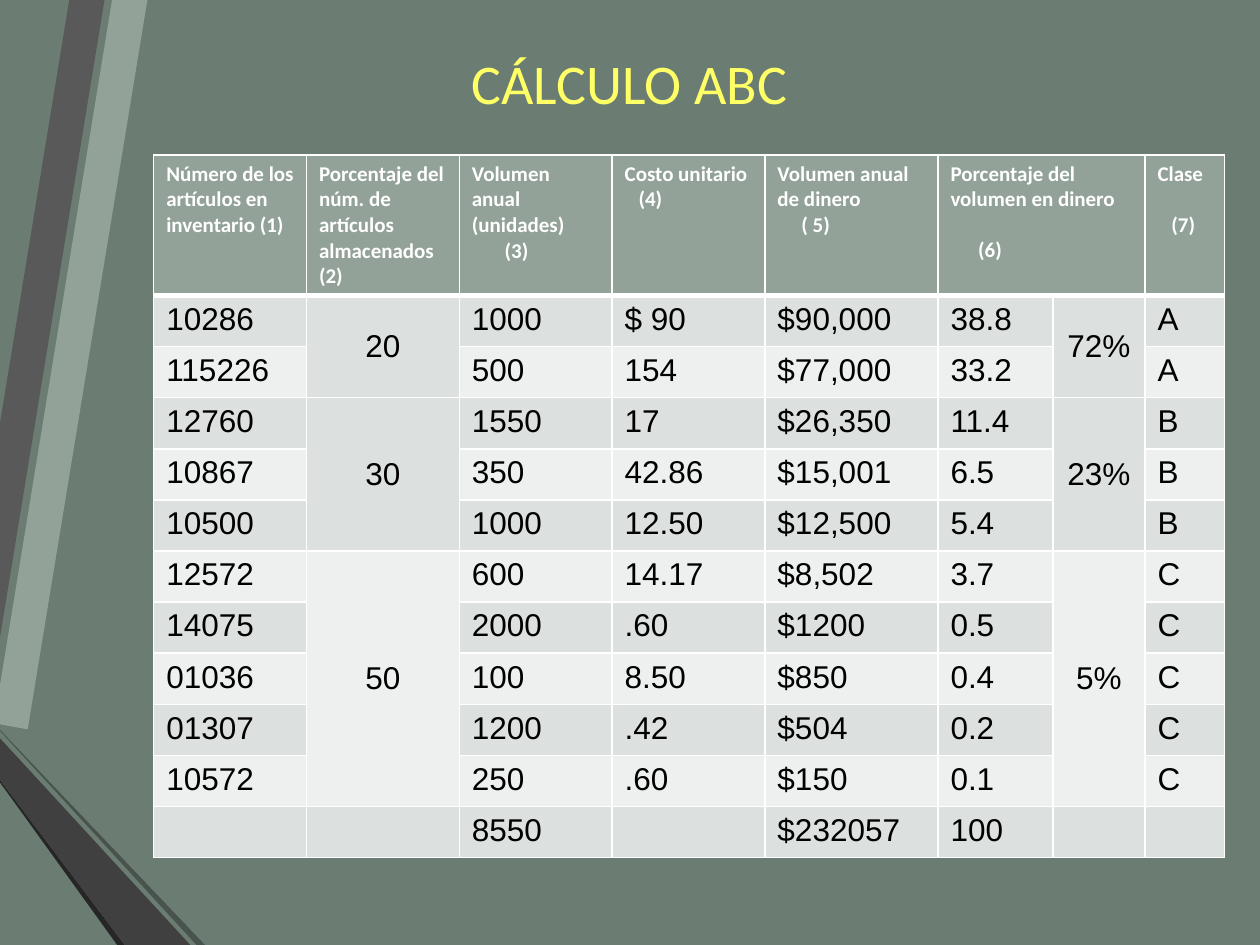
from lxml import etree
from pptx import Presentation
from pptx.dml.color import RGBColor
from pptx.enum.text import MSO_ANCHOR, PP_ALIGN
from pptx.oxml.ns import qn
from pptx.util import Inches, Pt

LEFT, CENTER = PP_ALIGN.LEFT, PP_ALIGN.CENTER
TOP, MIDDLE = MSO_ANCHOR.TOP, MSO_ANCHOR.MIDDLE
WIDE, HIGH = 10, 7.5
BACK, SAGE, WHITE = "6B7D72", "93A299", "FFFFFF"
BANDS = "DCE0DE", "EEF0EF"

STRIPES = [
    (SAGE, [(0, 5.44), (0, 5.75), (0.22, 5.79), (1.17, 0), (0.89, 0)]),
    ("595959", [(0.83, 0), (0.55, 0), (0, 3.36), (0, 5.06)]),
    ("262626", [(0, 6.19), (0, 6.21), (0.93, 7.5), (0.99, 7.5)]),
    ("47534C", [(0, 5.79), (0, 5.8), (1.56, 7.5), (1.63, 7.5)]),
    (BACK, [(0, 5.79), (1.63, 7.5), (2.33, 7.5), (0.22, 5.79), (0, 5.75)]),
    ("404040", [(0, 6.19), (0.99, 7.5), (1.51, 7.5), (0, 5.86)]),
]

COLS = [1.21, 1.21, 1.21, 1.21, 1.37, 0.91, 0.73, 0.63]
HEAD_SHARE = 0.2
# column: text, number below it, indent in inches, space before in points
HEADS = {
    0: ("Número de los artículos en inventario (1)", "", 0, 0),
    1: ("Porcentaje del núm. de artículos almacenados (2)", "", 0, 0),
    2: ("Volumen anual (unidades)", "(3)", 0.26, 0),
    3: ("Costo unitario", "(4)", 0.11, 0),
    4: ("Volumen anual de dinero", "( 5)", 0.19, 0),
    5: ("Porcentaje del volumen en dinero", "(6)", 0.22, 14.5),
    7: ("Clase", "(7)", 0.11, 14.5),
}
# class, share of items, share of money, items
GROUPS = [
    ("A", "20", "72%", [
        ("10286", "1000", "$ 90", "$90,000", "38.8"),
        ("115226", "500", "154", "$77,000", "33.2")]),
    ("B", "30", "23%", [
        ("12760", "1550", "17", "$26,350", "11.4"),
        ("10867", "350", "42.86", "$15,001", "6.5"),
        ("10500", "1000", "12.50", "$12,500", "5.4")]),
    ("C", "50", "5%", [
        ("12572", "600", "14.17", "$8,502", "3.7"),
        ("14075", "2000", ".60", "$1200", "0.5"),
        ("01036", "100", "8.50", "$850", "0.4"),
        ("01307", "1200", ".42", "$504", "0.2"),
        ("10572", "250", ".60", "$150", "0.1")]),
]
TOTALS = {2: "8550", 4: "$232057", 5: "100"}


def paint(fill, color):
    fill.solid()
    fill.fore_color.rgb = RGBColor.from_string(color)


def write(frame, text, size=18, font="Arial", color="000000", bold=False,
          align=LEFT, indent=0, before=0, more=False):
    """Fill the first paragraph, or add one below when more is set."""
    para = frame.add_paragraph() if more else frame.paragraphs[0]
    para.alignment = align
    if indent:
        para._p.get_or_add_pPr().set("marL", str(Inches(indent)))
    if before:
        para.space_before = Pt(before)
    run = para.add_run()
    run.text = text
    run.font.size, run.font.name, run.font.bold = Pt(size), font, bold
    paint(run.font.fill, color)


def edge(cell, **widths):
    """Draw white borders; widths are points by side L, R, T, B."""
    props = cell._tc.get_or_add_tcPr()
    for side, width in widths.items():
        line = etree.SubElement(props, qn("a:ln" + side), w=str(Pt(width)))
        fill = etree.SubElement(line, qn("a:solidFill"))
        etree.SubElement(fill, qn("a:srgbClr"), val=WHITE)


def decor(slide, box):
    left, top = box[:2]
    for color, spots in STRIPES:
        first, *rest = [(Inches(left + x), Inches(top + y)) for x, y in spots]
        path = slide.shapes.build_freeform(*first)
        path.add_line_segments(rest, close=True)
        shape = path.convert_to_shape()
        shape.shadow.inherit = False
        paint(shape.fill, color)
        shape.line.fill.background()


def title(slide, box, text):
    frame = slide.shapes.add_textbox(*map(Inches, box)).text_frame
    frame.word_wrap = True
    frame.vertical_anchor = MIDDLE
    write(frame, text, size=32, font="Calibri", color="FFFF66", align=CENTER)


def header(table):
    table.cell(0, 5).merge(table.cell(0, 6))
    for col, (text, mark, indent, before) in HEADS.items():
        frame = table.cell(0, col).text_frame
        style = dict(size=12, font="Calibri", color=WHITE, bold=True)
        write(frame, text, **style)
        if mark:
            write(frame, mark, indent=indent, before=before, more=True, **style)


def group(table, top, name, share, money, items):
    """Write one class of items from row top, with its two merged cells."""
    for row, (code, *rest) in enumerate(items, top):
        for col, text in zip((0, 2, 3, 4, 5, 7), (code, *rest, name)):
            write(table.cell(row, col).text_frame, text)
    for col, text in ((1, share), (6, money)):
        cell = table.cell(top, col)
        cell.merge(table.cell(top + len(items) - 1, col))
        cell.vertical_anchor = MIDDLE
        write(cell.text_frame, text, align=CENTER)


def grid(slide, box):
    wide, high = box[2:]
    count = 2 + sum(len(items) for *_, items in GROUPS)
    table = slide.shapes.add_table(
        count, len(COLS), *map(Inches, box)).table
    for col, part in zip(table.columns, COLS):
        col.width = Inches(wide * part / sum(COLS))
    for num, row in enumerate(table.rows):
        share = (1 - HEAD_SHARE) / (count - 1) if num else HEAD_SHARE
        row.height = Inches(high * share)
        for cell in row.cells:
            edge(cell, L=1, R=1, T=3 if num == 1 else 1, B=1 if num else 3)
            paint(cell.fill, BANDS[(num - 1) % 2] if num else SAGE)
            cell.vertical_anchor = TOP
    header(table)
    top = 1
    for name, share, money, items in GROUPS:
        group(table, top, name, share, money, items)
        top += len(items)
    for col, text in TOTALS.items():
        write(table.cell(top, col).text_frame, text)


def main():
    deck = Presentation()
    deck.slide_width, deck.slide_height = Inches(WIDE), Inches(HIGH)
    slide = deck.slides.add_slide(deck.slide_layouts[6])
    paint(slide.background.fill, BACK)
    decor(slide, (0, 0, WIDE, HIGH))
    title(slide, (2.95, 0.29, 4.09, 0.72), "CÁLCULO ABC")
    grid(slide, (1.22, 1.23, 8.5, 5.58))
    deck.save("out.pptx")


if __name__ == "__main__":
    main()
